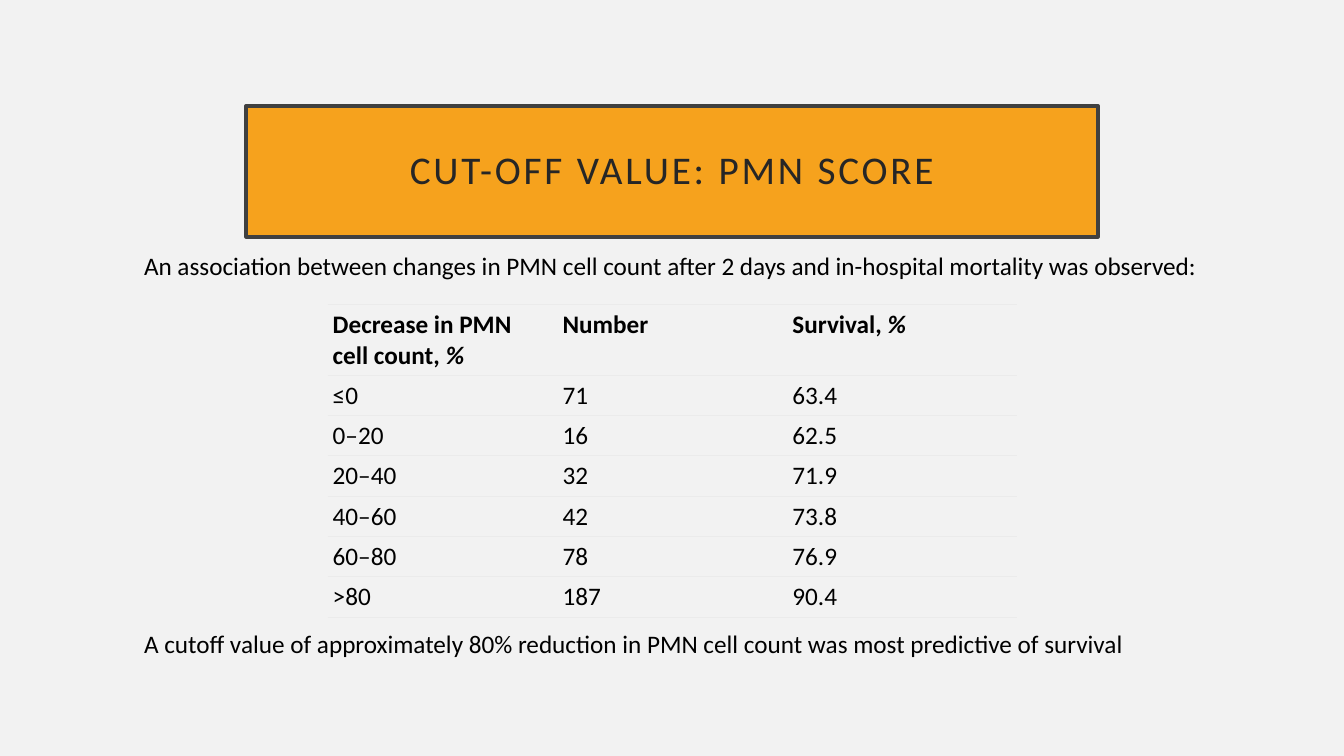
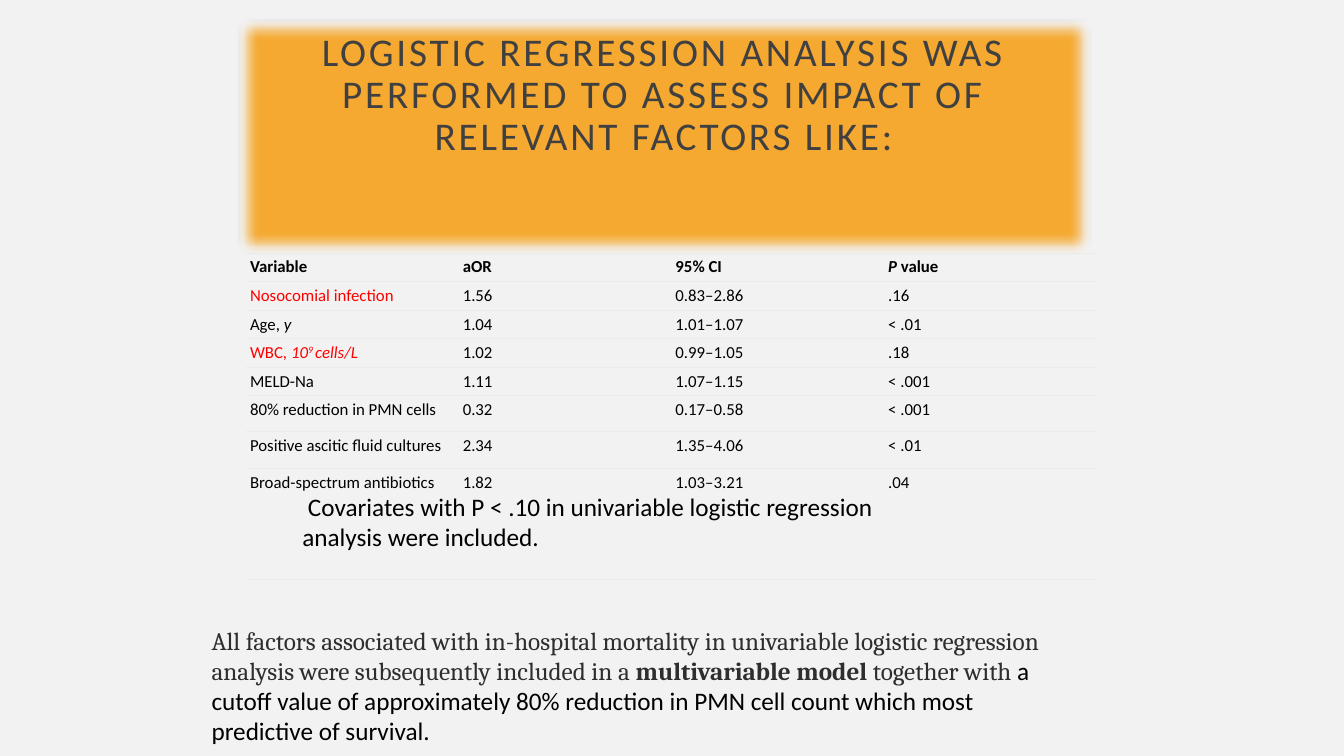
from dataclasses import dataclass

from lxml import etree
from pptx import Presentation
from pptx import util as u
from pptx.dml.color import RGBColor
from pptx.enum import text
from pptx.oxml import ns

ORANGE = RGBColor(0xF6, 0xA2, 0x1D)
PAPER = RGBColor(0xF2, 0xF2, 0xF2)
RULE = RGBColor(0xEB, 0xEB, 0xEB)
FRAME = RGBColor(0x40, 0x40, 0x40)
TITLE_DARK = RGBColor(0x26, 0x26, 0x26)
PROSE = RGBColor(0x2E, 0x2E, 0x2E)
BLACK = RGBColor(0, 0, 0)
RED = RGBColor(0xFF, 0, 0)

SANS, SERIF = "Calibri", "Cambria"
BODY_SIZE = 18
TITLE_WIDTH = 8.45
TITLE_ONLY_LAYOUT = 5


@dataclass(frozen=True)
class Span:
    text: str
    italic: bool | None = None
    bold: bool | None = None
    superscript: bool = False
    font: str | None = None
    color: RGBColor | None = None


@dataclass(frozen=True)
class Box:
    left: float
    top: float
    width: float
    height: float

    def lengths(self) -> tuple:
        return tuple(u.Inches(v) for v in (self.left, self.top, self.width, self.height))


@dataclass(frozen=True)
class TableSpec:
    left: float
    top: float
    column_width: float
    row_heights: list[float]
    rows: list[list]
    size: float
    margin: float
    red_rows: tuple[int, ...] = ()


SURVIVAL = TableSpec(
    3.25, 3.02, 2.28, [0.7] + [0.4] * 6,
    [
        [[Span("Decrease in PMN cell count, "), Span("%", italic=True)],
         "Number",
         [Span("Survival, "), Span("%", italic=True)]],
        ["≤0", "71", "63.4"],
        ["0–20", "16", "62.5"],
        ["20–40", "32", "71.9"],
        ["40–60", "42", "73.8"],
        ["60–80", "78", "76.9"],
        [">80", "187", "90.4"],
    ],
    size=BODY_SIZE, margin=0.05)

REGRESSION = TableSpec(
    2.44, 2.51, 2.11, [0.27] * 5 + [0.36] * 2 + [1.1],
    [
        ["Variable", "aOR", "95% CI", [Span("P", italic=True), Span(" value")]],
        ["Nosocomial infection", "1.56", "0.83–2.86", ".16"],
        [[Span("Age, "), Span("y", italic=True)], "1.04", "1.01–1.07", "< .01"],
        [[Span("WBC, "), Span("10", italic=True),
          Span("9 ", italic=True, superscript=True), Span("cells/L", italic=True)],
         "1.02", "0.99–1.05", ".18"],
        ["MELD-Na", "1.11", "1.07–1.15", "< .001"],
        ["80% reduction in PMN cells", "0.32", "0.17–0.58", "< .001"],
        ["Positive ascitic fluid cultures", "2.34", "1.35–4.06", "< .01"],
        ["Broad-spectrum antibiotics", "1.82", "1.03–3.21", ".04"],
    ],
    size=12, margin=0.04, red_rows=(1, 3))

MODEL_SUMMARY = [
    Span("All factors associated with in-hospital mortality in univariable logistic "
         "regression analysis were subsequently included in a ", font=SERIF, color=PROSE),
    Span("multivariable model ", bold=True, font=SERIF, color=PROSE),
    Span("together with ", font=SERIF, color=PROSE),
    Span("a cutoff value of approximately 80% reduction in PMN cell count "
         "which most predictive of survival."),
]


def write(paragraph, content: str | list[Span], size: float,
          color: RGBColor = BLACK, bold: bool = False) -> None:
    """Set the paragraph's font, then add runs that carry only their differences."""
    paragraph.font.name = SANS
    paragraph.font.size = u.Pt(size)
    paragraph.font.bold = bold
    paragraph.font.color.rgb = color
    for span in [Span(content)] if isinstance(content, str) else content:
        run = paragraph.add_run()
        run.text = span.text
        run.font.italic = span.italic
        run.font.bold = span.bold
        if span.font:
            run.font.name = span.font
        if span.color is not None:
            run.font.color.rgb = span.color
        if span.superscript:
            run._r.get_or_add_rPr().set("baseline", "30000")


def set_margins(target, margin: float) -> None:
    target.margin_left = target.margin_right = u.Inches(margin)
    target.margin_top = target.margin_bottom = u.Inches(margin)


def add_title(slide, title: str, left: float, top: float, height: float, color: RGBColor):
    shape = slide.shapes.title
    shape.left, shape.top, shape.width, shape.height = Box(
        left, top, TITLE_WIDTH, height).lengths()
    shape.fill.solid()
    shape.fill.fore_color.rgb = ORANGE
    shape.line.color.rgb = FRAME
    shape.line.width = u.Pt(2.5)
    frame = shape.text_frame
    frame.word_wrap = True
    frame.auto_size = text.MSO_AUTO_SIZE.NONE
    frame.vertical_anchor = text.MSO_ANCHOR.MIDDLE
    set_margins(frame, 0.2)
    paragraph = frame.paragraphs[0]
    paragraph.alignment = text.PP_ALIGN.CENTER
    paragraph.line_spacing = 0.9
    write(paragraph, title, 28, color)
    paragraph.runs[0]._r.get_or_add_rPr().set("spc", "200")
    return shape


def soften(shape, opacity: int, radius: float) -> None:
    """Make the fill slightly transparent and blur the shape's edges."""
    properties = shape._element.spPr
    fill_color = properties.find(ns.qn("a:solidFill"))[0]
    etree.SubElement(fill_color, ns.qn("a:alpha"), val=str(opacity * 1000))
    effects = etree.SubElement(properties, ns.qn("a:effectLst"))
    etree.SubElement(effects, ns.qn("a:softEdge"), rad=str(u.Inches(radius)))


def add_text(slide, box: Box, content: str | list[Span]) -> None:
    frame = slide.shapes.add_textbox(*box.lengths()).text_frame
    frame.word_wrap = True
    write(frame.paragraphs[0], content, BODY_SIZE)


def rule_cell(cell) -> None:
    """Draw thin rules above and below the cell and none at its sides."""
    properties = cell._tc.get_or_add_tcPr()
    for index, side in enumerate(("lnL", "lnR", "lnT", "lnB")):
        line = etree.Element(ns.qn(f"a:{side}"), w=str(u.Pt(0.75)))
        if side in ("lnL", "lnR"):
            etree.SubElement(line, ns.qn("a:noFill"))
        else:
            fill = etree.SubElement(line, ns.qn("a:solidFill"))
            etree.SubElement(fill, ns.qn("a:srgbClr"), val=str(RULE))
        properties.insert(index, line)


def add_table(slide, spec: TableSpec) -> None:
    column_count = len(spec.rows[0])
    box = Box(spec.left, spec.top, spec.column_width * column_count, sum(spec.row_heights))
    table = slide.shapes.add_table(len(spec.rows), column_count, *box.lengths()).table
    table.first_row = table.horz_banding = False
    for column in table.columns:
        column.width = u.Inches(spec.column_width)
    for row_index, (values, height) in enumerate(zip(spec.rows, spec.row_heights)):
        table.rows[row_index].height = u.Inches(height)
        for column_index, value in enumerate(values):
            cell = table.cell(row_index, column_index)
            cell.fill.background()
            rule_cell(cell)
            set_margins(cell, spec.margin)
            is_red = column_index == 0 and row_index in spec.red_rows
            write(cell.text_frame.paragraphs[0], value, spec.size,
                  RED if is_red else BLACK, bold=row_index == 0)


def add_cutoff_slide(presentation) -> None:
    slide = presentation.slides.add_slide(presentation.slide_layouts[TITLE_ONLY_LAYOUT])
    add_title(slide, "CUT-OFF VALUE: PMN SCORE", 2.44, 1.05, 1.3, TITLE_DARK)
    add_text(slide, Box(1.33, 2.43, 10.68, 0.4),
             "An association between changes in PMN cell count after 2 days "
             "and in-hospital mortality was observed:")
    add_table(slide, SURVIVAL)
    add_text(slide, Box(1.33, 6.18, 10.68, 0.4),
             "A cutoff value of approximately 80% reduction in PMN cell count "
             "was most predictive of survival")


def add_regression_slide(presentation) -> None:
    slide = presentation.slides.add_slide(presentation.slide_layouts[TITLE_ONLY_LAYOUT])
    title = add_title(slide, "LOGISTIC REGRESSION ANALYSIS WAS PERFORMED TO ASSESS "
                      "IMPACT OF RELEVANT FACTORS LIKE:", 2.36, 0.19, 2.32, FRAME)
    title.text_frame.vertical_anchor = text.MSO_ANCHOR.TOP
    title.text_frame.margin_top = u.Inches(0.13)
    soften(title, opacity=90, radius=0.12)
    add_table(slide, REGRESSION)
    add_text(slide, Box(2.9, 4.82, 6.67, 0.71),
             " Covariates with P < .10 in univariable logistic regression "
             "analysis were included.")
    add_text(slide, Box(2, 6.15, 8.45, 1.31), MODEL_SUMMARY)


def main() -> None:
    presentation = Presentation()
    presentation.slide_width = u.Inches(13.33)
    presentation.slide_height = u.Inches(7.5)
    background = presentation.slide_master.background.fill
    background.solid()
    background.fore_color.rgb = PAPER
    add_cutoff_slide(presentation)
    add_regression_slide(presentation)
    presentation.save("out.pptx")


if __name__ == "__main__":
    main()
